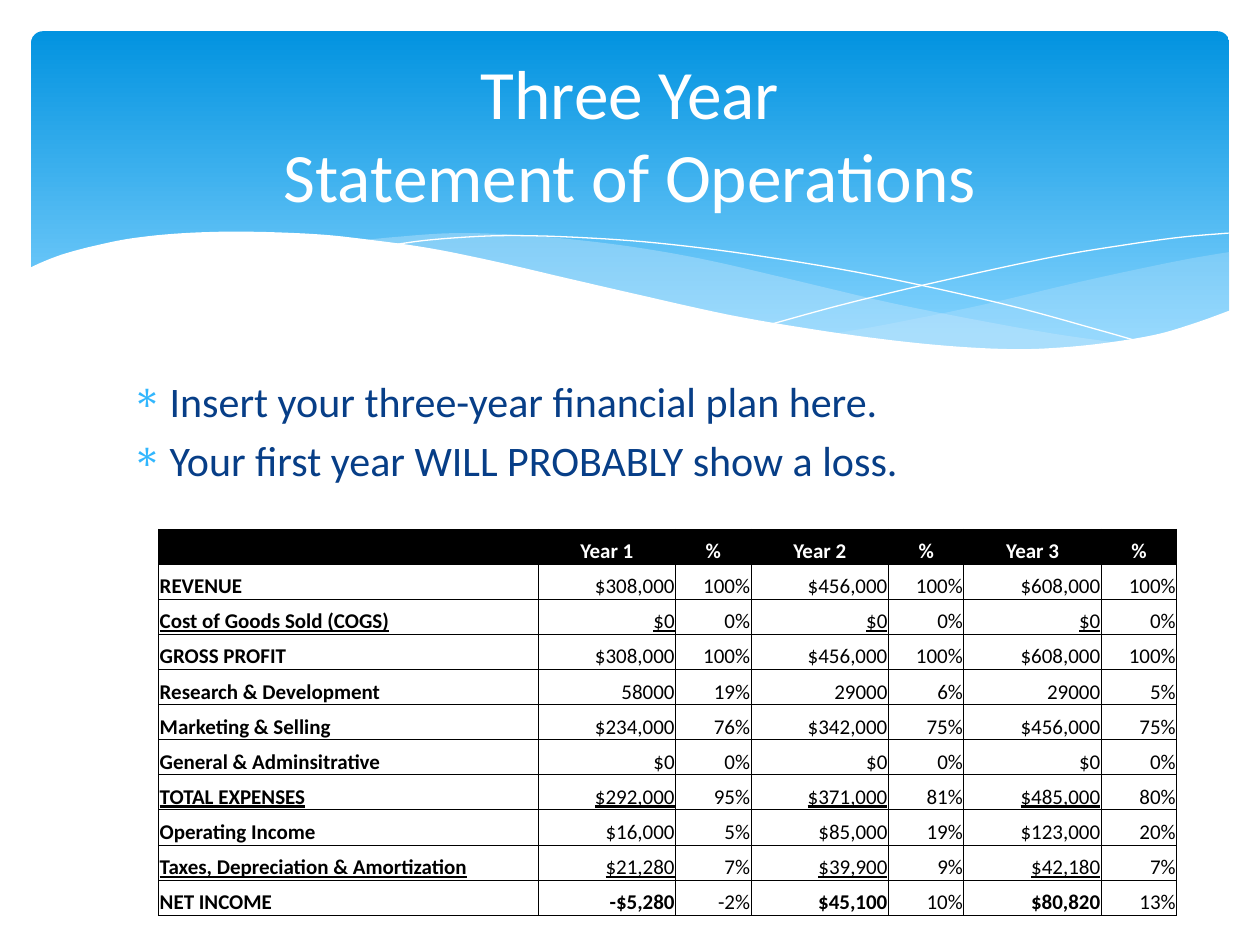
from dataclasses import dataclass

from lxml import etree
from pptx import Presentation
from pptx import util as u
from pptx.dml import color
from pptx.enum import shapes, text
from pptx.oxml import ns


@dataclass(frozen=True)
class Theme:
    font: str = "Calibri"
    white: str = "FFFFFF"
    black: str = "000000"
    navy: str = "073E87"
    bullet: str = "31B6FD"
    deep: str = "0293E0"
    pale: str = "83D3FE"
    mist: str = "C6E7FC"
    title: float = 39.6
    body: float = 24
    cell: float = 12
    rule: float = 0.5


THEME = Theme()
LEFT, MID, RIGHT = (text.PP_ALIGN.LEFT, text.PP_ALIGN.CENTER, text.PP_ALIGN.RIGHT)

# Waves: lists of key points in cm, each list a smooth curve
RIGHT_WAVE = [
    [(24.79, 5.08), (23.75, 5.26), (21.87, 5.66), (19.79, 6.15), (17.93, 6.53), (16.79, 6.73)],
    [(16.79, 6.73), (17.91, 6.88), (19.23, 7.01), (20.4, 7.06), (21.44, 7.04), (22.38, 6.93),
     (23.19, 6.78), (23.93, 6.58), (24.79, 6.27)],
]
LONG_WAVE = [
    [(7.26, 4.85), (7.95, 4.78), (9.17, 4.7), (10.67, 4.75), (12.42, 4.93), (14.1, 5.21),
     (15.98, 5.64), (17.93, 6.1), (19.69, 6.45), (21.26, 6.73), (22.68, 6.93)],
    [(22.68, 6.93), (21.77, 7.04), (20.5, 7.06), (19, 7.01), (17.27, 6.81), (15.7, 6.55),
     (13.46, 6.1), (11.4, 5.64), (9.73, 5.26), (8.2, 4.98), (7.26, 4.85)],
]
FALL_LINE = [
    [(7.85, 4.95), (8.74, 4.83), (10.19, 4.75), (11.91, 4.8), (13.54, 4.93), (15.44, 5.18),
     (17.65, 5.56), (20.19, 6.12), (22.07, 6.63), (23.04, 6.91)],
]
RISE_LINE = [
    [(15.57, 6.53), (17.07, 6.12), (19, 5.66), (21.23, 5.18), (22.73, 4.93), (23.83, 4.78),
     (24.77, 4.7)],
]
WHITE_WAVE = [
    [(24.82, 6.25), (24.13, 6.5), (23.37, 6.73), (22.53, 6.88), (21.59, 6.99), (20.55, 7.04),
     (19.33, 6.99), (17.98, 6.86), (16.46, 6.65), (14.71, 6.35), (12.78, 5.92), (11.35, 5.59),
     (9.93, 5.26), (8.64, 5), (7.42, 4.83), (6.35, 4.72), (4.9, 4.67), (3.71, 4.7),
     (2.69, 4.8), (1.93, 4.95), (1.32, 5.11), (0.91, 5.26), (0.58, 5.41)],
    [(0.58, 8.36), (24.82, 8.36)],
]

# Table: the head, then each row with its value and percent pairs
HEAD = ["", "Year 1", "%", "Year 2", "%", "Year 3", "%"]
ROWS = [
    ["REVENUE", "$308,000", "100%", "$456,000", "100%", "$608,000", "100%"],
    ["Cost of Goods Sold (COGS)", "$0", "0%", "$0", "0%", "$0", "0%"],
    ["GROSS PROFIT", "$308,000", "100%", "$456,000", "100%", "$608,000", "100%"],
    ["Research & Development", "58000", "19%", "29000", "6%", "29000", "5%"],
    ["Marketing & Selling", "$234,000", "76%", "$342,000", "75%", "$456,000", "75%"],
    ["General & Adminsitrative", "$0", "0%", "$0", "0%", "$0", "0%"],
    ["TOTAL EXPENSES", "$292,000", "95%", "$371,000", "81%", "$485,000", "80%"],
    ["Operating Income", "$16,000", "5%", "$85,000", "19%", "$123,000", "20%"],
    ["Taxes, Depreciation & Amortization", "$21,280", "7%", "$39,900", "9%", "$42,180", "7%"],
    ["NET INCOME", "-$5,280", "-2%", "$45,100", "10%", "$80,820", "13%"],
]
LINED = {"Cost of Goods Sold (COGS)", "TOTAL EXPENSES", "Taxes, Depreciation & Amortization"}
TOTAL = "NET INCOME"


def rgb(tone):
    return color.RGBColor.from_string(tone)


def add(node, tag, **attrs):
    return etree.SubElement(node, ns.qn(tag), attrs)


def write(para, words, size, tone, align=LEFT, bold=False, line=False):
    para.text, para.alignment = words, align
    if not words:
        para._p.get_or_add_endParaRPr().set("sz", str(int(size * 100)))
    for run in para.runs:
        font = run.font
        font.name, font.size, font.bold = THEME.font, u.Pt(size), bold
        font.underline = line
        font.color.rgb = rgb(tone)


def smooth(keys, steps=6):
    """Points of a Catmull-Rom curve through the keys."""
    if len(keys) < 3:
        return keys
    ends = [keys[0], *keys, keys[-1]]
    spots = [keys[0]]
    for a, b, c, d in zip(ends, ends[1:], ends[2:], ends[3:]):
        for n in range(1, steps + 1):
            t = n / steps
            spots.append(tuple(
                (2 * q + (r - p) * t + (2 * p - 5 * q + 4 * r - s) * t ** 2
                 + (3 * q - p - 3 * r + s) * t ** 3) / 2
                for p, q, r, s in zip(a, b, c, d)))
    return spots


class Deck:
    def __init__(self, theme):
        self.theme = theme
        self.prs = Presentation()
        self.prs.slide_width, self.prs.slide_height = u.Cm(25.4), u.Cm(19.05)
        self.slide = self.prs.slides.add_slide(self.prs.slide_layouts[6])

    def band(self, *box):
        kind = shapes.MSO_SHAPE.ROUNDED_RECTANGLE
        shape = self.slide.shapes.add_shape(kind, *map(u.Cm, box))
        shape.adjustments[0] = 0.034
        shape.shadow.inherit = False
        shape.line.fill.background()
        shape.fill.gradient()
        shape.fill.gradient_angle = 270
        tones = [(0, self.theme.deep), (0.9, self.theme.pale)]
        for stop, (place, tone) in zip(shape.fill.gradient_stops, tones):
            stop.position, stop.color.rgb = place, rgb(tone)

    def wave(self, curves, fill=None, alpha=100):
        """A filled wave, or a white hairline when no fill is given."""
        first, *rest = [(u.Cm(x), u.Cm(y)) for keys in curves for x, y in smooth(keys)]
        form = self.slide.shapes.build_freeform(*first)
        form.add_line_segments(rest, close=bool(fill))
        shape = form.convert_to_shape()
        shape.shadow.inherit = False
        if fill:
            shape.line.fill.background()
            shape.fill.solid()
            shape.fill.fore_color.rgb = rgb(fill)
            tone = shape._element.spPr.find(".//" + ns.qn("a:srgbClr"))
            add(tone, "a:alpha", val=str(alpha * 1000))
        else:
            shape.fill.background()
            shape.line.color.rgb = rgb(self.theme.white)
            shape.line.width = u.Cm(0)

    def frame(self, *box):
        frame = self.slide.shapes.add_textbox(*map(u.Cm, box)).text_frame
        frame.word_wrap = True
        return frame

    def title(self, words, *box):
        frame = self.frame(*box)
        frame.vertical_anchor = text.MSO_ANCHOR.MIDDLE
        write(frame.paragraphs[0], words, self.theme.title, self.theme.white, align=MID)

    def points(self, items, *box):
        frame = self.frame(*box)
        for n, words in enumerate(items):
            para = frame.add_paragraph() if n else frame.paragraphs[0]
            write(para, words, self.theme.body, self.theme.navy)
            para.space_before = u.Pt(self.theme.body * 0.2)
            props = para._p.get_or_add_pPr()
            props.set("marL", str(u.Cm(0.76)))
            props.set("indent", str(u.Cm(-0.76)))
            add(add(props, "a:buClr"), "a:srgbClr", val=self.theme.bullet)
            add(props, "a:buChar", char="∗")

    def cell(self, cell, words, fill=None, **form):
        cell.vertical_anchor = text.MSO_ANCHOR.BOTTOM
        cell.margin_left = cell.margin_right = cell.margin_top = u.Cm(0.02)
        cell.margin_bottom = u.Cm(0)
        props = cell._tc.get_or_add_tcPr()
        for side in "LRTB":
            edge = add(props, f"a:ln{side}", w=str(u.Pt(self.theme.rule)))
            add(add(edge, "a:solidFill"), "a:srgbClr", val=self.theme.black)
        if fill:
            cell.fill.solid()
            cell.fill.fore_color.rgb = rgb(fill)
        else:
            cell.fill.background()
        write(cell.text_frame.paragraphs[0], words, self.theme.cell, **form)

    def table(self, head, rows, widths, *box):
        size = len(rows) + 1, len(head)
        table = self.slide.shapes.add_table(*size, *map(u.Cm, box)).table
        table.first_row = table.horz_banding = False
        for col, width in zip(table.columns, widths):
            col.width = u.Cm(width)
        for row in table.rows:
            row.height = u.Cm(box[3] / size[0])
        for c, words in enumerate(head):
            self.cell(table.cell(0, c), words, fill=self.theme.black,
                      tone=self.theme.white, align=MID, bold=True)
        for r, row in enumerate(rows, 1):
            for c, words in enumerate(row):
                cash = c % 2 == 1
                self.cell(table.cell(r, c), words, tone=self.theme.black,
                          align=RIGHT if c else LEFT,
                          bold=c == 0 or cash and row[0] == TOTAL,
                          line=row[0] in LINED and (c == 0 or cash))


def main():
    deck = Deck(THEME)

    # Header band and waves
    deck.band(0.63, 0.63, 24.15, 6.86)
    deck.wave(RIGHT_WAVE, THEME.mist, 29)
    deck.wave(LONG_WAVE, THEME.mist, 40)
    deck.wave(FALL_LINE)
    deck.wave(RISE_LINE)
    deck.wave(WHITE_WAVE, THEME.white)

    # Text
    deck.points(["Insert your three-year financial plan here.",
                 "Your first year WILL PROBABLY show a loss."], 2.41, 7.44, 20.57, 9.58)
    deck.title("Three Year\nStatement of Operations", 1.27, 0.94, 22.86, 3.48)

    # Three-year plan
    deck.table(HEAD, ROWS, [7.65] + [2.77, 1.52] * 3, 3.2, 10.67, 20.52, 7.78)
    deck.prs.save("out.pptx")


if __name__ == "__main__":
    main()
